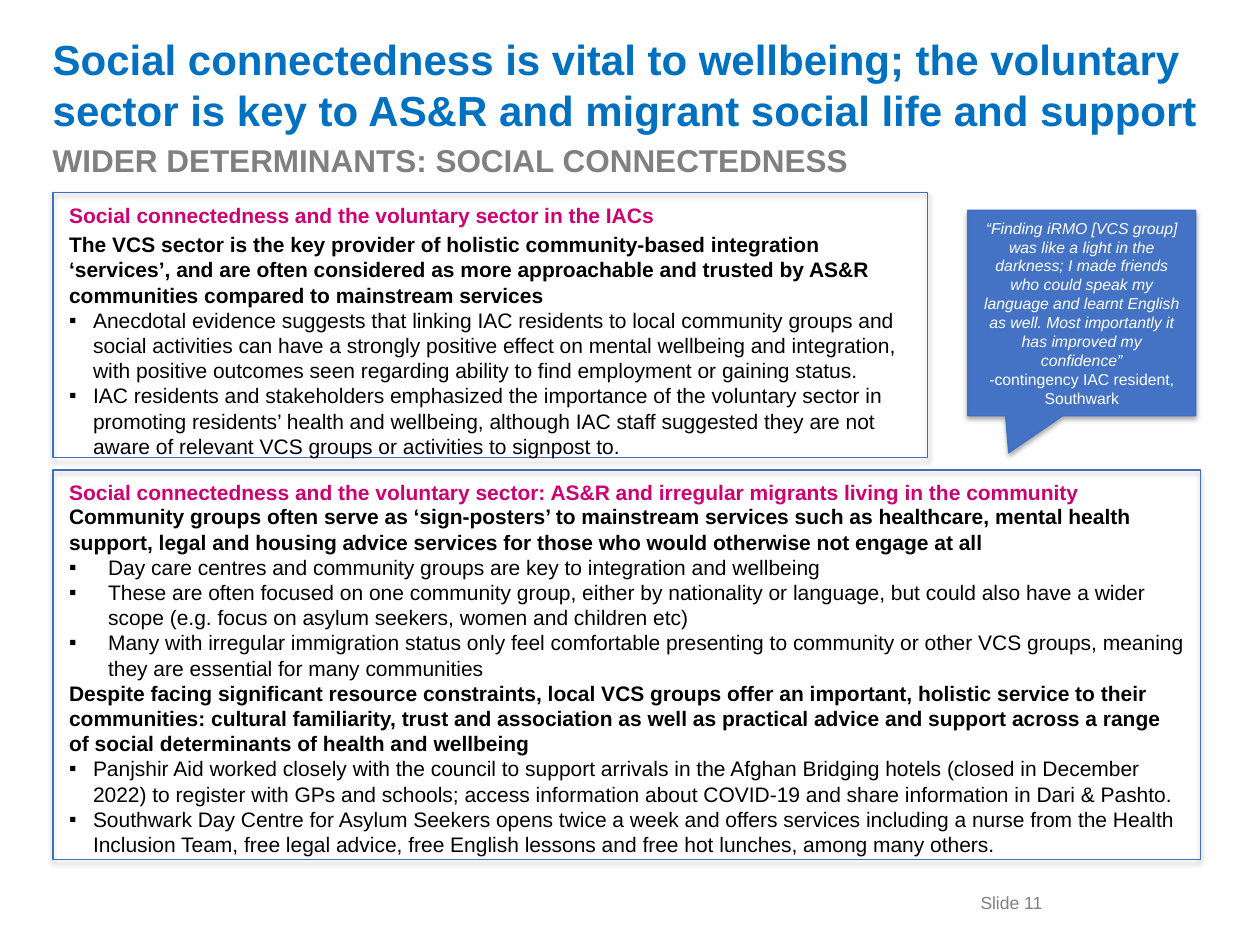
from dataclasses import dataclass
from lxml.etree import SubElement as Sub
from pptx import Presentation
from pptx.dml.color import RGBColor as Rgb
from pptx.enum.shapes import MSO_SHAPE as Kind
from pptx.enum.text import MSO_ANCHOR as Anchor, PP_ALIGN as Align
from pptx.oxml.ns import qn
from pptx.util import Inches, Pt


@dataclass(frozen=True)
class Theme:
    face: str = "Arial"
    blue: str = "0070C0"
    grey: str = "808080"
    pink: str = "CF0072"
    ink: str = "000000"
    white: str = "FFFFFF"
    edge: str = "3F6FC3"
    fill: str = "4472C4"
    title: int = 24
    sub: int = 18
    body: int = 12
    foot: int = 10
    quote: int = 9


class Deck:
    def __init__(self, theme):
        self.theme = theme
        self.file = Presentation()
        self.file.slide_width, self.file.slide_height = Inches(10), Inches(7.5)
        self.slide = self.file.slides.add_slide(self.file.slide_layouts[6])

    def style(self, para, size, tint, bold=False, slant=False):
        font = para.font
        font.name, font.size = self.theme.face, Pt(size)
        font.bold, font.italic = bold, slant
        font.color.rgb = Rgb.from_string(tint)

    def frame(self, left, top, width, height, wrap=True):
        box = self.slide.shapes.add_textbox(*map(Inches, (left, top, width, height)))
        box.text_frame.word_wrap = wrap
        return box.text_frame

    def label(self, area, text, size, tint, bold=True, wrap=True,
              align=Align.LEFT, anchor=Anchor.TOP):
        frame = self.frame(*area, wrap)
        frame.vertical_anchor = anchor
        para = frame.paragraphs[0]
        para.text, para.alignment = text, align
        self.style(para, size, tint, bold)

    def bullet(self, para, indent):
        props = para._p.get_or_add_pPr()
        props.set("marL", str(Inches(indent)))
        props.set("indent", str(-Inches(indent)))
        Sub(props, qn("a:buFont"), typeface=self.theme.face)
        Sub(props, qn("a:buChar"), char="▪")

    def prose(self, area, items):
        frame = self.frame(*area)
        for i, (text, indent) in enumerate(items):
            para = frame.add_paragraph() if i else frame.paragraphs[0]
            para.text = text
            if indent:
                self.bullet(para, indent)
            self.style(para, self.theme.body, self.theme.ink, not indent)

    def shape(self, kind, area, fill=None):
        item = self.slide.shapes.add_shape(kind, *map(Inches, area))
        if fill:
            item.fill.solid()
            item.fill.fore_color.rgb = Rgb.from_string(fill)
        else:
            item.fill.background()
        item.line.color.rgb = Rgb.from_string(self.theme.edge)
        item.line.width = Pt(0.75)
        self.shade(item)
        return item

    def shade(self, item):
        item.shadow.inherit = False
        glow = Sub(item._element.spPr.find(qn("a:effectLst")), qn("a:outerShdw"),
                   blurRad=str(Pt(3.1)), dist=str(Pt(1.8)), dir="5400000",
                   rotWithShape="0")
        tone = Sub(glow, qn("a:srgbClr"), val=self.theme.ink)
        Sub(tone, qn("a:alpha"), val="35000")

    def panel(self, area, head, width):
        self.shape(Kind.RECTANGLE, area)
        left, top = area[:2]
        self.label((left + 0.03, top + 0.03, width, 0.3), head,
                   self.theme.body, self.theme.pink, wrap=False)

    def quote(self, area, words, source):
        item = self.shape(Kind.RECTANGULAR_CALLOUT, area, self.theme.fill)
        item.adjustments[0], item.adjustments[1] = -0.32, 0.68
        frame = item.text_frame
        frame.word_wrap, frame.vertical_anchor = True, Anchor.MIDDLE
        first, last = frame.paragraphs[0], frame.add_paragraph()
        for para, text, slant in ((first, words, True), (last, source, False)):
            para.text, para.alignment = text, Align.CENTER
            self.style(para, self.theme.quote, self.theme.white, slant=slant)


NEAR, WIDE = 0.19, 0.31
CENTRES = [
    ("The VCS sector is the key provider of holistic community-based integration ‘services’, and are often considered as more approachable and trusted by AS&R communities compared to mainstream services", 0),
    ("Anecdotal evidence suggests that linking IAC residents to local community groups and social activities can have a strongly positive effect on mental wellbeing and integration, with positive outcomes seen regarding ability to find employment or gaining status.", NEAR),
    ("IAC residents and stakeholders emphasized the importance of the voluntary sector in promoting residents’ health and wellbeing, although IAC staff suggested they are not aware of relevant VCS groups or activities to signpost to.", NEAR),
]
GROUPS = [
    ("Community groups often serve as ‘sign-posters’ to mainstream services such as healthcare, mental health support, legal and housing advice services for those who would otherwise not engage at all", 0),
    ("Day care centres and community groups are key to integration and wellbeing", WIDE),
    ("These are often focused on one community group, either by nationality or language, but could also have a wider scope (e.g. focus on asylum seekers, women and children etc)", WIDE),
    ("Many with irregular immigration status only feel comfortable presenting to community or other VCS groups, meaning they are essential for many communities", WIDE),
    ("Despite facing significant resource constraints, local VCS groups offer an important, holistic service to their communities: cultural familiarity, trust and association as well as practical advice and support across a range of social determinants of health and wellbeing", 0),
    ("Panjshir Aid worked closely with the council to support arrivals in the Afghan Bridging hotels (closed in December 2022) to register with GPs and schools; access information about COVID-19 and share information in Dari & Pashto.", NEAR),
    ("Southwark Day Centre for Asylum Seekers opens twice a week and offers services including a nurse from the Health Inclusion Team, free legal advice, free English lessons and free hot lunches, among many others.", NEAR),
]


def main():
    look = Theme()
    deck = Deck(look)
    deck.label((0.32, 0.15, 9.73, 1.04),
               "Social connectedness is vital to wellbeing; the voluntary sector is key to AS&R and migrant social life and support",
               look.title, look.blue, anchor=Anchor.MIDDLE)
    deck.label((6.74, 7.03, 1.63, 0.27), "Slide 11", look.foot, look.grey,
               bold=False, align=Align.RIGHT)
    deck.label((0.32, 1.07, 9.73, 0.4), "WIDER DETERMINANTS: SOCIAL CONNECTEDNESS",
               look.sub, look.grey)
    deck.panel((0.42, 1.53, 6.94, 2.1),
               "Social connectedness and the voluntary sector in the IACs", 4.9)
    deck.prose((0.45, 1.79, 6.91, 1.92), CENTRES)
    deck.panel((0.42, 3.73, 9.11, 3.09),
               "Social connectedness and the voluntary sector: AS&R and irregular migrants living in the community", 8.52)
    deck.quote((7.68, 1.67, 1.81, 1.63),
               "“Finding iRMO [VCS group] was like a light in the darkness; I made friends who could speak my language and learnt English as well. Most importantly it has improved my confidence”",
               "-contingency IAC resident, Southwark")
    deck.prose((0.45, 3.95, 9.07, 3.13), GROUPS)
    deck.file.save("out.pptx")


if __name__ == "__main__":
    main()
